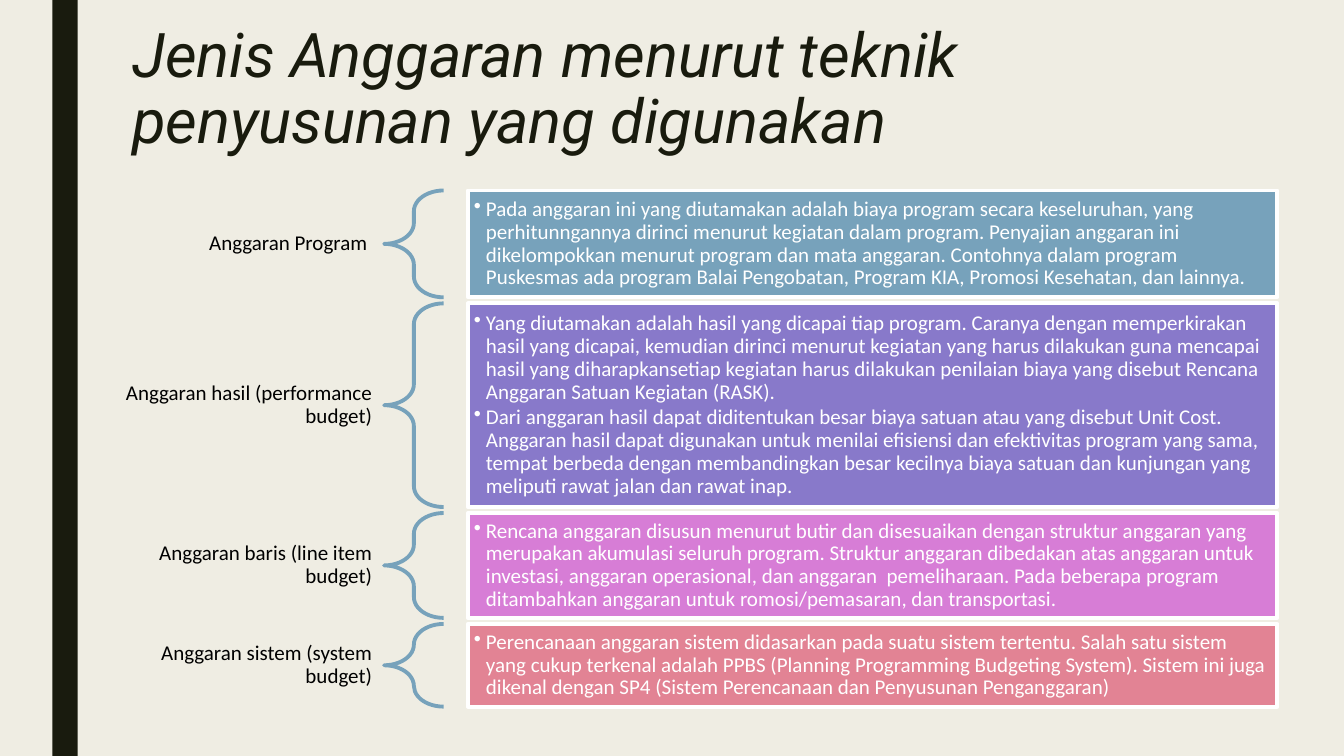
"""Build a slide that explains four budget types by drafting technique."""
from dataclasses import dataclass

from lxml import etree
from pptx import Presentation
from pptx.dml.color import RGBColor
from pptx.enum.shapes import MSO_SHAPE
from pptx.enum.text import MSO_ANCHOR, MSO_AUTO_SIZE, PP_ALIGN
from pptx.oxml.ns import qn
from pptx.util import Inches, Pt

RECTANGLE = MSO_SHAPE.RECTANGLE
LEFT_BRACE = MSO_SHAPE.LEFT_BRACE
TOP, MIDDLE = MSO_ANCHOR.TOP, MSO_ANCHOR.MIDDLE
LEFT, RIGHT = PP_ALIGN.LEFT, PP_ALIGN.RIGHT
NO_AUTOFIT = MSO_AUTO_SIZE.NONE


@dataclass(frozen=True)
class Theme:
    background: str = "EFEDE3"
    dark: str = "191B0E"
    brace: str = "77A2BB"
    label: str = "000000"
    white: str = "FFFFFF"
    title_font: str = "Roboto"
    body_font: str = "Calibri"
    title_size: float = 44
    body_size: float = 15
    line_width: float = 2.75


@dataclass(frozen=True)
class BudgetType:
    name: str
    label_height: float
    height: float
    fill: str
    points: tuple[str, ...]


THEME = Theme()
FIRST_TOP, ROW_GAP = 1.89, 0.06
LABEL_LEFT, LABEL_WIDTH = 0.86, 2.95
BRACE_LEFT, BRACE_WIDTH = 3.81, 0.59
PANEL_LEFT, PANEL_WIDTH = 4.64, 8.03
BULLET_INDENT = 0.12

BUDGET_TYPES = (
    BudgetType("Anggaran Program ", 0.32, 1.06, "77A2BB", (
        "Pada anggaran ini yang diutamakan adalah biaya program secara keseluruhan, yang "
        "perhitunngannya dirinci menurut kegiatan dalam program. Penyajian anggaran ini "
        "dikelompokkan menurut program dan mata anggaran. Contohnya dalam program "
        "Puskesmas ada program Balai Pengobatan, Program KIA, Promosi Kesehatan, dan lainnya.",
    )),
    BudgetType("Anggaran hasil (performance budget)", 0.55, 2.02, "8879CA", (
        "Yang diutamakan adalah hasil yang dicapai tiap program. Caranya dengan memperkirakan "
        "hasil yang dicapai, kemudian dirinci menurut kegiatan yang harus dilakukan guna mencapai "
        "hasil yang diharapkansetiap kegiatan harus dilakukan penilaian biaya yang disebut Rencana "
        "Anggaran Satuan Kegiatan (RASK).",
        "Dari anggaran hasil dapat diditentukan besar biaya satuan atau yang disebut Unit Cost. "
        "Anggaran hasil dapat digunakan untuk menilai efisiensi dan efektivitas program yang sama, "
        "tempat berbeda dengan membandingkan besar kecilnya biaya satuan dan kunjungan yang "
        "meliputi rawat jalan dan rawat inap.",
    )),
    BudgetType("Anggaran baris (line item budget)", 0.55, 1.04, "D77DD6", (
        "Rencana anggaran disusun menurut butir dan disesuaikan dengan struktur anggaran yang "
        "merupakan akumulasi seluruh program. Struktur anggaran dibedakan atas anggaran untuk "
        "investasi, anggaran operasional, dan anggaran  pemeliharaan. Pada beberapa program "
        "ditambahkan anggaran untuk romosi/pemasaran, dan transportasi.",
    )),
    BudgetType("Anggaran sistem (system budget)", 0.55, 0.82, "E28394", (
        "Perencanaan anggaran sistem didasarkan pada suatu sistem tertentu. Salah satu sistem "
        "yang cukup terkenal adalah PPBS (Planning Programming Budgeting System). Sistem ini juga "
        "dikenal dengan SP4 (Sistem Perencanaan dan Penyusunan Penganggaran)",
    )),
)


def rgb(value: str) -> RGBColor:
    """Turn a hex value into a colour."""
    return RGBColor.from_string(value)


def set_frame(frame, horizontal: float, vertical: float, anchor: MSO_ANCHOR) -> None:
    """Set wrapping, insets and vertical anchor of a text frame."""
    frame.word_wrap = True
    frame.auto_size = NO_AUTOFIT
    frame.vertical_anchor = anchor
    frame.margin_left = frame.margin_right = Inches(horizontal)
    frame.margin_top = frame.margin_bottom = Inches(vertical)


def style_paragraph(paragraph, color: str, align: PP_ALIGN, spacing: float = 0.9,
                    font: str = THEME.body_font, size: float = THEME.body_size) -> None:
    """Set font, colour, alignment and line spacing of a paragraph."""
    paragraph.alignment = align
    paragraph.line_spacing = spacing
    paragraph.font.name = font
    paragraph.font.size = Pt(size)
    paragraph.font.color.rgb = rgb(color)


def add_bullet(paragraph) -> None:
    """Give a paragraph a hanging round bullet."""
    properties = paragraph._p.get_or_add_pPr()
    properties.set("marL", str(Inches(BULLET_INDENT)))
    properties.set("indent", str(-Inches(BULLET_INDENT)))
    bullet = etree.Element(qn("a:buChar"), char="•")
    run_defaults = properties.find(qn("a:defRPr"))
    run_defaults.addprevious(bullet)


def add_title(slide, text: str) -> None:
    """Place and format the slide title."""
    title = slide.shapes.title
    title.left, title.top = Inches(1.21), Inches(0.2)
    title.width, title.height = Inches(10.5), Inches(1.62)
    title.text_frame.text = text
    set_frame(title.text_frame, 0.1, 0.05, TOP)
    heading = title.text_frame.paragraphs[0]
    style_paragraph(heading, THEME.dark, LEFT, 0.89, THEME.title_font, THEME.title_size)
    heading.font.italic = True


def add_side_bar(slide) -> None:
    """Draw the dark bar at the left."""
    bar = slide.shapes.add_shape(RECTANGLE, Inches(0.52), 0, Inches(0.25), Inches(7.5))
    bar.shadow.inherit = False
    bar.fill.solid()
    bar.fill.fore_color.rgb = rgb(THEME.dark)
    bar.line.fill.background()


def add_label(slide, budget: BudgetType, top: float) -> None:
    """Write the budget name, centred on its row."""
    label_top = top + (budget.height - budget.label_height) / 2
    label = slide.shapes.add_textbox(Inches(LABEL_LEFT), Inches(label_top),
                                     Inches(LABEL_WIDTH), Inches(budget.label_height))
    set_frame(label.text_frame, 0.12, 0.04, MIDDLE)
    label.text_frame.text = budget.name
    style_paragraph(label.text_frame.paragraphs[0], THEME.label, RIGHT)


def add_brace(slide, budget: BudgetType, top: float) -> None:
    """Draw the brace that joins a name to its panel."""
    brace = slide.shapes.add_shape(LEFT_BRACE, Inches(BRACE_LEFT), Inches(top),
                                   Inches(BRACE_WIDTH), Inches(budget.height))
    brace.shadow.inherit = False
    brace.adjustments[0], brace.adjustments[1] = 0.35, 0.5
    brace.fill.background()
    brace.line.color.rgb = rgb(THEME.brace)
    brace.line.width = Pt(THEME.line_width)


def add_panel(slide, budget: BudgetType, top: float) -> None:
    """Draw the coloured panel with its bulleted explanation."""
    panel = slide.shapes.add_shape(RECTANGLE, Inches(PANEL_LEFT), Inches(top),
                                   Inches(PANEL_WIDTH), Inches(budget.height))
    panel.shadow.inherit = False
    panel.fill.solid()
    panel.fill.fore_color.rgb = rgb(budget.fill)
    panel.line.color.rgb = rgb(THEME.white)
    panel.line.width = Pt(THEME.line_width)
    set_frame(panel.text_frame, 0.06, 0.06, MIDDLE)
    panel.text_frame.text = "\n".join(budget.points)
    for point in panel.text_frame.paragraphs:
        style_paragraph(point, THEME.white, LEFT)
        point.space_after = Pt(0.15 * THEME.body_size)
        add_bullet(point)


def main() -> None:
    """Assemble and save the slide."""
    presentation = Presentation()
    presentation.slide_width, presentation.slide_height = Inches(13.33), Inches(7.5)
    slide = presentation.slides.add_slide(presentation.slide_layouts[5])
    slide.background.fill.solid()
    slide.background.fill.fore_color.rgb = rgb(THEME.background)
    add_side_bar(slide)
    add_title(slide, "Jenis Anggaran menurut teknik penyusunan yang digunakan")
    top = FIRST_TOP
    for budget in BUDGET_TYPES:
        add_label(slide, budget, top)
        add_brace(slide, budget, top)
        add_panel(slide, budget, top)
        top += budget.height + ROW_GAP
    presentation.save("out.pptx")


if __name__ == "__main__":
    main()
